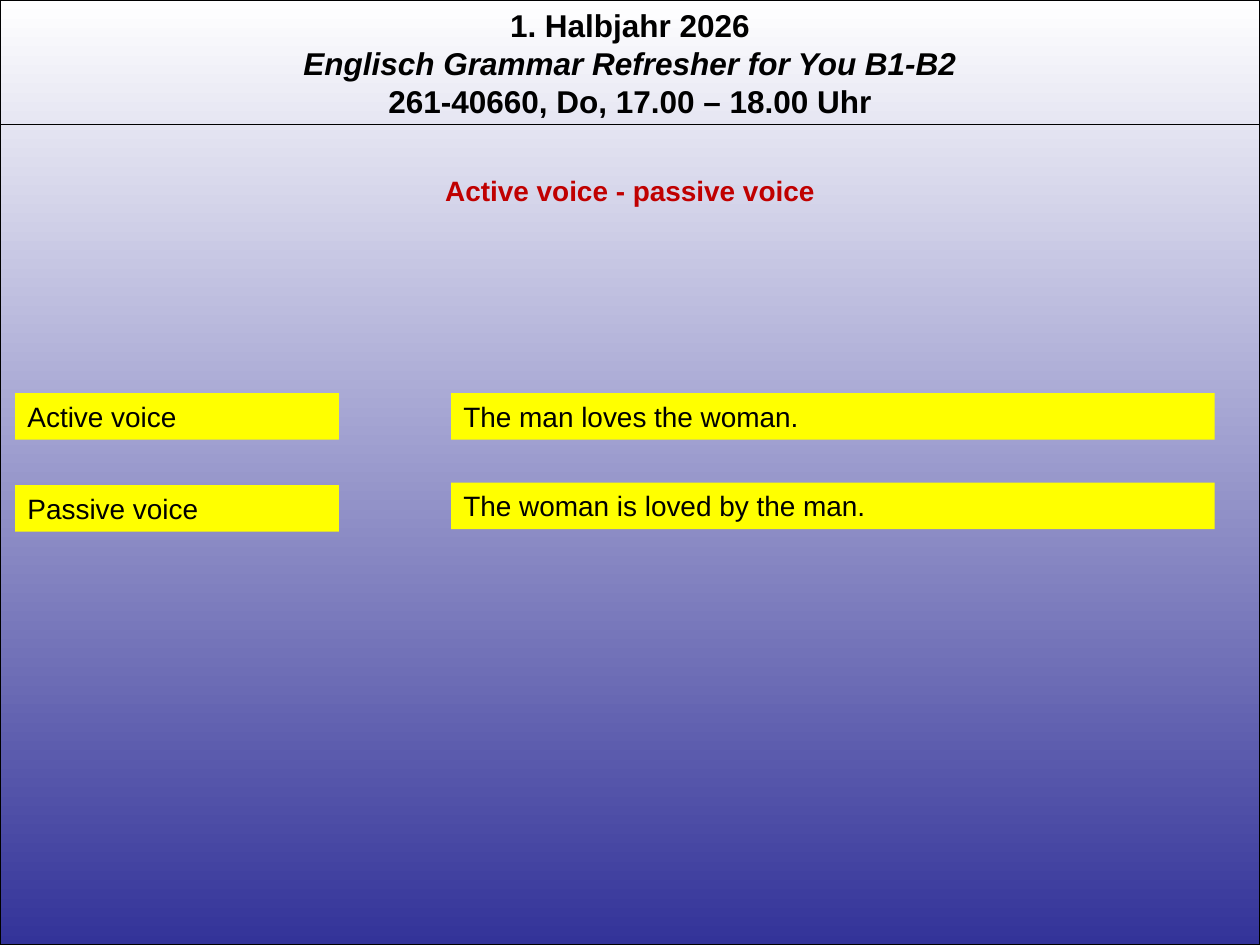
from dataclasses import dataclass

from lxml import etree
from pptx import Presentation
from pptx.dml.color import RGBColor
from pptx.enum import shapes, text
from pptx.oxml import ns
from pptx.util import Inches, Pt


@dataclass(frozen=True)
class Theme:
    font: str = "Arial"
    ink: RGBColor = RGBColor(0x00, 0x00, 0x00)
    topic: RGBColor = RGBColor(0xC0, 0x00, 0x00)
    label: RGBColor = RGBColor(0xFF, 0xFF, 0x00)
    sky: RGBColor = RGBColor(0xFF, 0xFF, 0xFF)
    ground: RGBColor = RGBColor(0x33, 0x33, 0x99)
    header_size: int = 18
    body_size: int = 16
    rule_width: float = 0.75


THEME = Theme()


def write(frame, line, first=True, size=THEME.body_size, color=THEME.ink,
          bold=False, italic=False, align=text.PP_ALIGN.LEFT):
    paragraph = frame.paragraphs[0] if first else frame.add_paragraph()
    paragraph.alignment = align
    run = paragraph.add_run()
    run.text = line
    run.font.name = THEME.font
    run.font.size = Pt(size)
    run.font.color.rgb = color
    run.font.bold = bold
    run.font.italic = italic


class Lesson:
    def __init__(self, slide, theme):
        self.slide = slide
        self.theme = theme

    def rectangle(self, left, top, width, height):
        box = self.slide.shapes.add_shape(
            shapes.MSO_SHAPE.RECTANGLE,
            Inches(left), Inches(top), Inches(width), Inches(height))
        box.shadow.inherit = False
        return box

    def fit(self, frame):
        frame.word_wrap = True
        frame.vertical_anchor = text.MSO_ANCHOR.TOP
        frame.auto_size = text.MSO_AUTO_SIZE.SHAPE_TO_FIT_TEXT

    def backdrop(self, width, height):
        panel = self.rectangle(0, 0, width, height)
        panel.fill.gradient()
        panel.fill.gradient_angle = 270
        for stop, color in zip(panel.fill.gradient_stops,
                               (self.theme.sky, self.theme.ground)):
            stop.color.rgb = color
        panel.line.color.rgb = self.theme.ink
        panel.line.width = Pt(self.theme.rule_width)

    def header(self, lines, width, height):
        course = self.slide.shapes.add_textbox(
            0, 0, Inches(width), Inches(height)).text_frame
        self.fit(course)
        for index, (line, italic) in enumerate(lines):
            write(course, line, first=index == 0, size=self.theme.header_size,
                  bold=True, italic=italic, align=text.PP_ALIGN.CENTER)

    def rule(self, top, width):
        divider = self.slide.shapes.add_connector(
            shapes.MSO_CONNECTOR.STRAIGHT, 0, Inches(top), Inches(width), Inches(top))
        divider.line.color.rgb = self.theme.ink
        divider.line.width = Pt(self.theme.rule_width)
        etree.SubElement(divider.element.spPr, ns.qn("a:effectLst"))

    def topic(self, line, top, width, height):
        title = self.slide.shapes.title
        title.left, title.top = 0, Inches(top)
        title.width, title.height = Inches(width), Inches(height)
        self.fit(title.text_frame)
        write(title.text_frame, line, color=self.theme.topic, bold=True,
              align=text.PP_ALIGN.CENTER)
        self.slide.shapes[-1].element.addnext(title.element)

    def label(self, line, left, top, width, height):
        box = self.rectangle(left, top, width, height)
        box.fill.solid()
        box.fill.fore_color.rgb = self.theme.label
        box.line.fill.background()
        self.fit(box.text_frame)
        write(box.text_frame, line)


def main():
    width, height, row_height = 10, 7.5, 0.37
    deck = Presentation()
    deck.slide_width, deck.slide_height = Inches(width), Inches(height)
    lesson = Lesson(deck.slides.add_slide(deck.slide_layouts[5]), THEME)

    lesson.backdrop(width, height)
    lesson.header([
        ("1. Halbjahr 2026", False),
        ("Englisch Grammar Refresher for You B1-B2", True),
        ("261-40660, Do, 17.00 – 18.00 Uhr", False),
    ], width, 1.01)
    lesson.rule(0.99, width)
    lesson.topic("Active voice - passive voice", 1.33, width, row_height)

    examples = [
        ("Active voice", 3.12, "The man loves the woman.", 3.12),
        ("Passive voice", 3.85, "The woman is loved by the man.", 3.83),
    ]
    for voice, voice_top, sentence, sentence_top in examples:
        lesson.label(voice, 0.12, voice_top, 2.57, row_height)
        lesson.label(sentence, 3.58, sentence_top, 6.06, row_height)

    deck.save("out.pptx")


if __name__ == "__main__":
    main()
